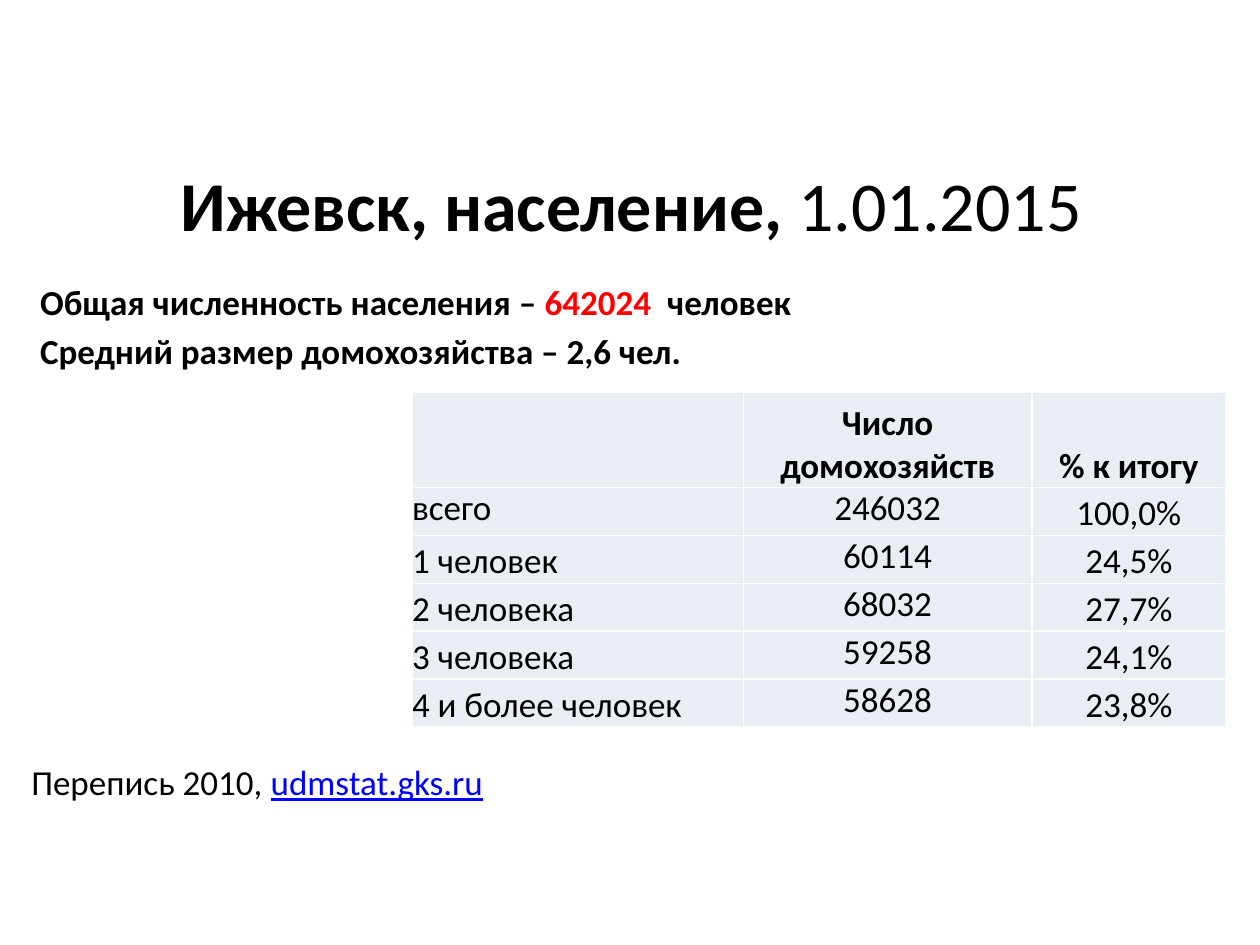
import pptx
import pptx.util
import pptx.dml.color
import pptx.enum.text
import pptx.oxml
import pptx.oxml.ns

Inches = pptx.util.Inches
Pt = pptx.util.Pt
ALIGN = pptx.enum.text.PP_ALIGN
ANCHOR = pptx.enum.text.MSO_ANCHOR

FONT = "Calibri"
COLOURS = {"text": "000000", "accent": "FF0000", "link": "0000FF",
           "cell": "E9EDF4", "border": "FFFFFF"}

COLUMN_WIDTHS = [2.63, 2.29, 1.54]
ROW_HEIGHT = 0.38
ROWS = [
    ["", "Число домохозяйств", "% к итогу"],
    ["всего", "246032", "100,0%"],
    ["1 человек", "60114", "24,5%"],
    ["2 человека", "68032", "27,7%"],
    ["3 человека", "59258", "24,1%"],
    ["4 и более человек", "58628", "23,8%"],
]


def colour(name):
    return pptx.dml.color.RGBColor.from_string(COLOURS[name])


def style_font(font, size=20, bold=False, tone="text"):
    font.name = FONT
    font.size = Pt(size)
    font.bold = bold
    font.color.rgb = colour(tone)


def add_span(para, text, **style):
    span = para.add_run()
    span.text = text
    style_font(span.font, **style)
    return span


def set_title(page):
    title = page.shapes.title
    title.left, title.top = Inches(0.51), Inches(0.99)
    title.width, title.height = Inches(9), Inches(1.25)
    title.text_frame.vertical_anchor = ANCHOR.MIDDLE
    para = title.text_frame.paragraphs[0]
    para.alignment = ALIGN.CENTER
    add_span(para, "Ижевск, население, ", size=40, bold=True)
    add_span(para, "1.01.2015", size=40)


def add_text_box(page, left, top, width, height):
    box = page.shapes.add_textbox(Inches(left), Inches(top), Inches(width), Inches(height))
    box.text_frame.word_wrap = True
    return box.text_frame


def add_summary(page):
    frame = add_text_box(page, 0.16, 2.18, 9.69, 0.93)
    total = frame.paragraphs[0]
    average = frame.add_paragraph()
    average.space_before = Pt(4)
    for para in (total, average):
        properties = para._p.get_or_add_pPr()
        properties.set("marL", str(Inches(0.06)))
        properties.set("indent", "0")
    add_span(total, "Общая численность населения – ", bold=True)
    add_span(total, "642024 ", bold=True, tone="accent")
    add_span(total, " человек", bold=True)
    add_span(average, "Средний размер домохозяйства – 2,6 чел.", bold=True)


def add_borders(cell):
    properties = cell._tc.get_or_add_tcPr()
    for index, side in enumerate(("lnL", "lnR", "lnT", "lnB")):
        line = pptx.oxml.parse_xml(
            f'<a:{side} {pptx.oxml.ns.nsdecls("a")} w="{Pt(1)}"><a:solidFill>'
            f'<a:srgbClr val="{COLOURS["border"]}"/></a:solidFill></a:{side}>')
        properties.insert(index, line)


def format_cell(cell, row, column):
    cell.fill.solid()
    cell.fill.fore_color.rgb = colour("cell")
    add_borders(cell)
    cell.margin_left = cell.margin_right = cell.margin_top = cell.margin_bottom = 0
    # Household counts and the label of the total row sit at the top
    at_top = row > 0 and (column == 1 or (row == 1 and column == 0))
    cell.vertical_anchor = ANCHOR.TOP if at_top else ANCHOR.BOTTOM
    para = cell.text_frame.paragraphs[0]
    para.alignment = ALIGN.LEFT if column == 0 else ALIGN.CENTER
    style_font(para.font, bold=row == 0)
    for span in para.runs:
        style_font(span.font, bold=row == 0)


def add_household_table(page):
    heights = [2 * ROW_HEIGHT] + [ROW_HEIGHT] * (len(ROWS) - 1)
    frame = page.shapes.add_table(
        len(ROWS), len(COLUMN_WIDTHS), Inches(3.27), Inches(3.11),
        Inches(sum(COLUMN_WIDTHS)), Inches(sum(heights)))
    table = frame.table
    table.first_row = table.horz_banding = False
    for column, width in enumerate(COLUMN_WIDTHS):
        table.columns[column].width = Inches(width)
    for row, texts in enumerate(ROWS):
        table.rows[row].height = Inches(heights[row])
        for column, text in enumerate(texts):
            cell = table.cell(row, column)
            cell.text_frame.text = text
            format_cell(cell, row, column)


def add_source_note(page):
    para = add_text_box(page, 0.15, 5.99, 7.58, 0.44).paragraphs[0]
    add_span(para, "Перепись 2010, ")
    address = add_span(para, "udmstat.gks.ru", tone="link")
    address.font.underline = True


def main():
    deck = pptx.Presentation()
    deck.slide_width, deck.slide_height = Inches(10), Inches(7.5)
    page = deck.slides.add_slide(deck.slide_layouts[5])  # title only
    set_title(page)
    add_source_note(page)
    add_household_table(page)
    add_summary(page)
    deck.save("out.pptx")


if __name__ == "__main__":
    main()
